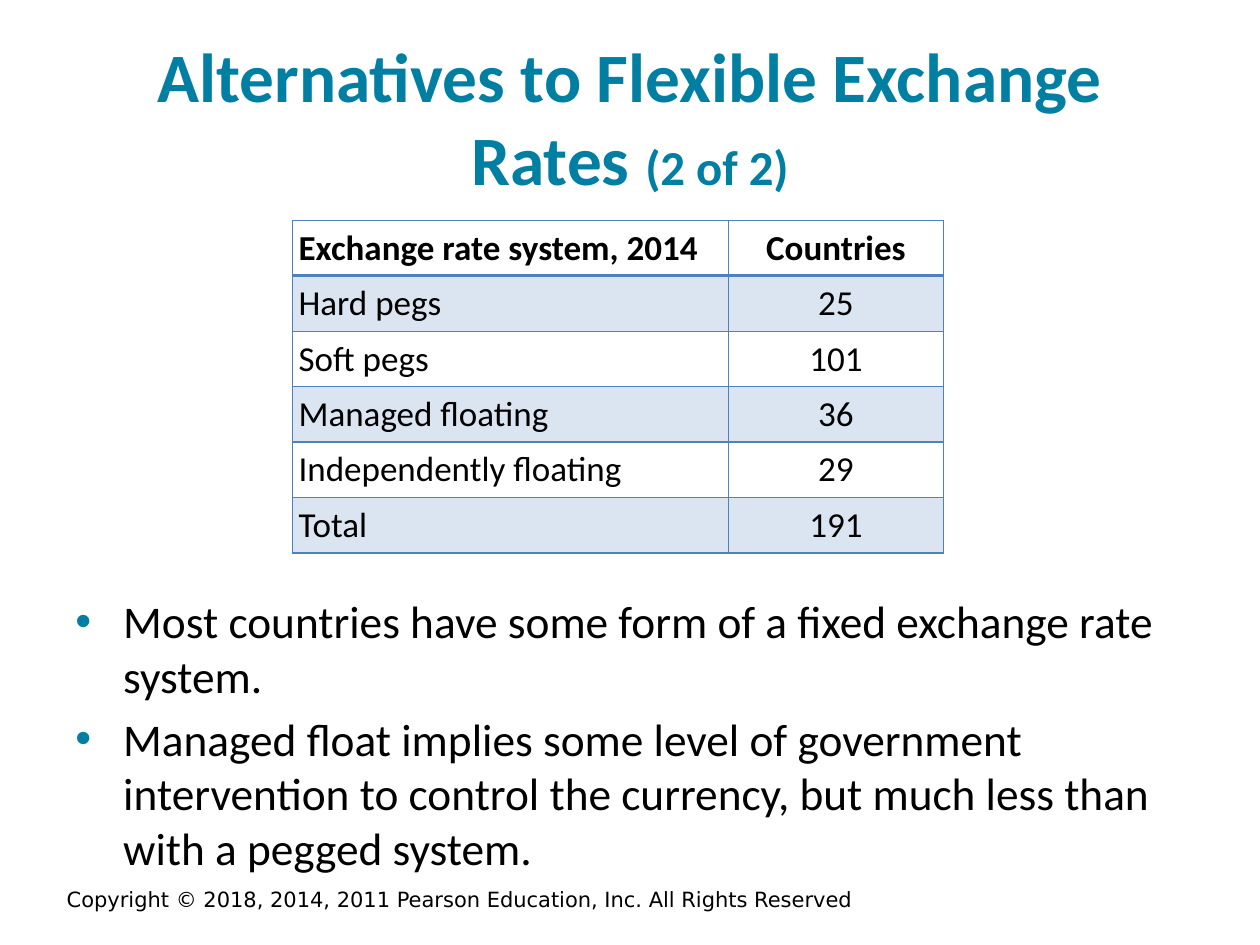
"""Build the slide on alternatives to flexible exchange rates."""
from lxml import etree
from pptx import Presentation
from pptx.dml.color import RGBColor
from pptx.enum.text import MSO_ANCHOR, PP_ALIGN
from pptx.oxml.ns import qn
from pptx.util import Inches, Pt

LEFT, CENTER = PP_ALIGN.LEFT, PP_ALIGN.CENTER
TOP, MIDDLE = MSO_ANCHOR.TOP, MSO_ANCHOR.MIDDLE
TEAL, BLUE, BLACK = "007FA3", "4F81BD", "000000"
SANS = "Calibri"

TITLE = [("Alternatives to Flexible Exchange Rates ", 39.6), ("(2 of 2)", 27.9)]
ROWS = [
    ("Exchange rate system, 2014", "Countries"),
    ("Hard pegs", "25"),
    ("Soft pegs", "101"),
    ("Managed floating", "36"),
    ("Independently floating", "29"),
    ("Total", "191"),
]
WIDTHS = (3.46, 1.71)
HEIGHT = 0.44
POINTS = [
    "Most countries have some form of a fixed exchange rate system.",
    "Managed float implies some level of government intervention to control "
    "the currency, but much less than with a pegged system.",
]
NOTICE = "Copyright © 2018, 2014, 2011 Pearson Education, Inc. All Rights Reserved"


def color(code):
    return RGBColor.from_string(code)


def add_run(para, text, size, tint=BLACK, bold=False, face=SANS):
    run = para.add_run()
    run.text = text
    font = run.font
    font.name, font.size, font.bold = face, Pt(size), bold
    font.color.rgb = color(tint)


def add_box(slide, left, top, width, height, anchor=TOP):
    box = slide.shapes.add_textbox(*map(Inches, (left, top, width, height)))
    frame = box.text_frame
    frame.word_wrap = True
    frame.vertical_anchor = anchor
    return frame


def add_bullet(para):
    props = para._p.get_or_add_pPr()
    props.set("marL", str(Inches(0.38)))
    props.set("indent", str(-Inches(0.38)))
    tint = etree.SubElement(props, qn("a:buClr"))
    etree.SubElement(tint, qn("a:srgbClr"), val=TEAL)
    etree.SubElement(props, qn("a:buFont"), typeface="Arial")
    etree.SubElement(props, qn("a:buChar"), char="•")


def add_edge(cell, side, width):
    props = cell._tc.get_or_add_tcPr()
    line = etree.SubElement(props, qn("a:ln" + side), w=str(Pt(width)))
    fill = etree.SubElement(line, qn("a:solidFill"))
    etree.SubElement(fill, qn("a:srgbClr"), val=BLUE)


def style_cell(cell, row):
    cell.margin_left = cell.margin_right = Inches(0.05)
    cell.margin_top = cell.margin_bottom = Inches(0.05)
    heavy = {(0, "B"), (1, "T")}
    for side in "LRTB":
        add_edge(cell, side, 2 if (row, side) in heavy else 1)
    if row % 2:
        cell.fill.solid()
        cell.fill.fore_color.rgb = color(BLUE)
        tint = cell._tc.tcPr.find(qn("a:solidFill")).find(qn("a:srgbClr"))
        etree.SubElement(tint, qn("a:alpha"), val="20000")
    else:
        cell.fill.background()


def add_grid(slide):
    size = (2.32, 1.75, sum(WIDTHS), HEIGHT * len(ROWS))
    frame = slide.shapes.add_table(len(ROWS), len(WIDTHS), *map(Inches, size))
    table = frame.table
    table.horz_banding = False
    for col, width in zip(table.columns, WIDTHS):
        col.width = Inches(width)
    for i, row in enumerate(ROWS):
        table.rows[i].height = Inches(HEIGHT)
        for j, text in enumerate(row):
            cell = table.cell(i, j)
            style_cell(cell, i)
            para = cell.text_frame.paragraphs[0]
            para.alignment = CENTER if j else LEFT
            add_run(para, text, 20, bold=i == 0)


def main():
    deck = Presentation()
    deck.slide_width, deck.slide_height = Inches(10), Inches(7.5)
    slide = deck.slides.add_slide(deck.slide_layouts[6])

    para = add_box(slide, -0.14, 6.99, 7.58, 0.36).paragraphs[0]
    para.alignment = CENTER
    add_run(para, NOTICE, 12, face="DejaVu Sans")

    para = add_box(slide, 0.5, 0.3, 9, 1.25, MIDDLE).paragraphs[0]
    para.alignment = CENTER
    for text, size in TITLE:
        add_run(para, text, size, TEAL, True)

    add_grid(slide)

    body = add_box(slide, 0.5, 4.66, 9, 2.04)
    for i, text in enumerate(POINTS):
        para = body.add_paragraph() if i else body.paragraphs[0]
        add_bullet(para)
        if i:
            para.space_before = Pt(5)
        add_run(para, text, 25.9)

    deck.save("out.pptx")


if __name__ == "__main__":
    main()
